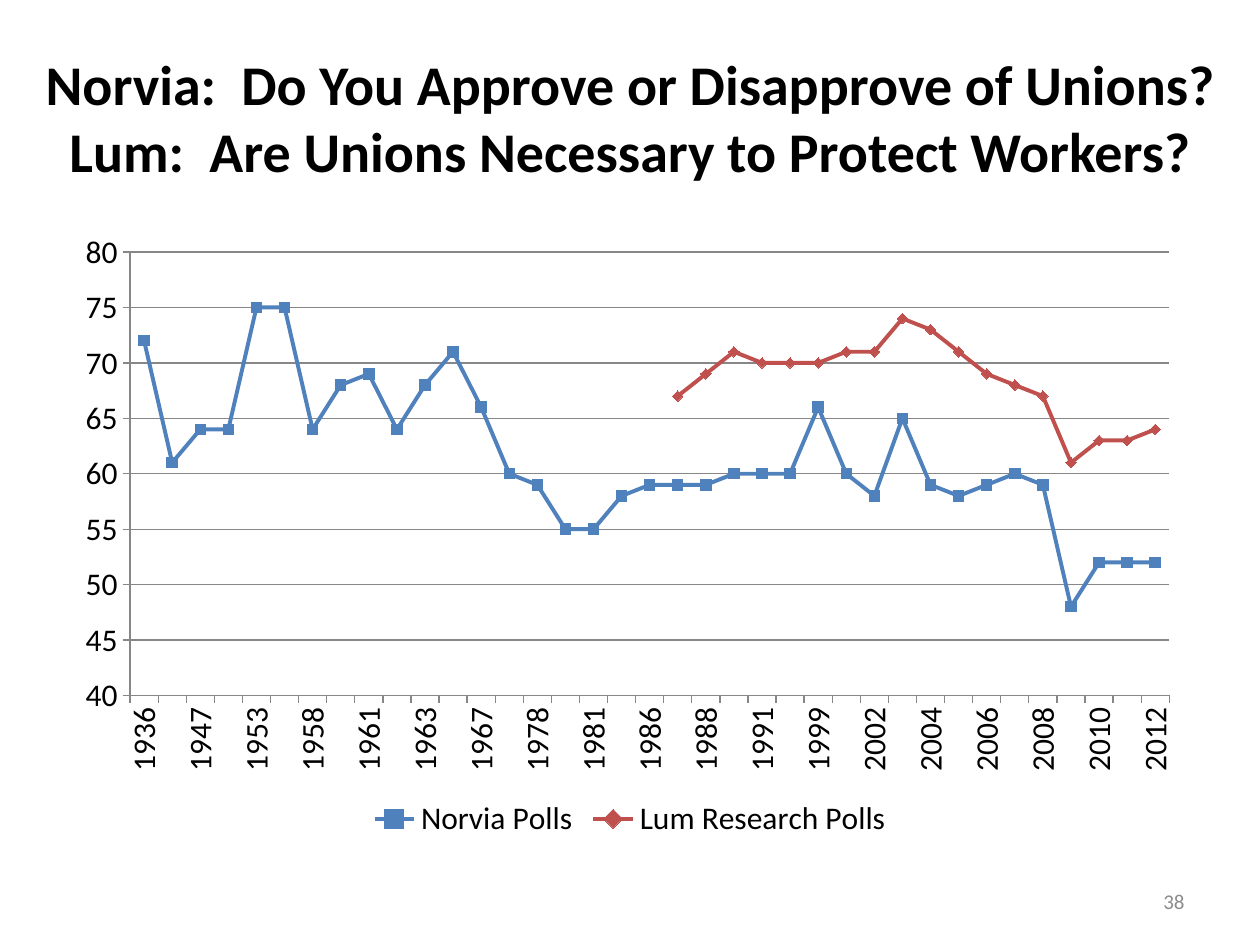
from dataclasses import dataclass

from lxml.etree import Element
from pptx import Presentation
from pptx.chart.data import CategoryChartData
from pptx.dml.color import RGBColor
from pptx.enum.chart import XL_CHART_TYPE, XL_LEGEND_POSITION, XL_MARKER_STYLE, XL_TICK_MARK
from pptx.enum.text import MSO_ANCHOR, PP_ALIGN
from pptx.oxml.ns import qn
from pptx.util import Inches, Pt


@dataclass(frozen=True)
class Theme:
    font: str = "Calibri"
    black: RGBColor = RGBColor.from_string("000000")
    gray: RGBColor = RGBColor.from_string("8C8C8C")
    axis: RGBColor = RGBColor.from_string("878787")
    blue: RGBColor = RGBColor.from_string("4F81BD")
    red: RGBColor = RGBColor.from_string("C0504D")
    title_size: Pt = Pt(32)
    chart_size: Pt = Pt(18)
    number_size: Pt = Pt(12)
    series_width: Pt = Pt(2.25)
    axis_width: Pt = Pt(0.75)
    marker_size: int = 6


THEME = Theme()

TITLE_LINES = (
    "Norvia:  Do You Approve or Disapprove of Unions?",
    "Lum:  Are Unions Necessary to Protect Workers?",
)

YEARS = (
    1936, 1941, 1947, 1948, 1953, 1957, 1958, 1959, 1961, 1962, 1963, 1965, 1967,
    1972, 1978, 1979, 1981, 1985, 1986, 1987, 1988, 1990, 1991, 1997, 1999,
    *range(2001, 2013),
)
APPROVAL = (
    72, 61, 64, 64, 75, 75, 64, 68, 69, 64, 68, 71, 66, 60, 59, 55, 55, 58, 59,
    59, 59, 60, 60, 60, 66, 60, 58, 65, 59, 58, 59, 60, 59, 48, 52, 52, 52,
)
NECESSITY = (67, 69, 71, 70, 70, 70, 71, 71, 74, 73, 71, 69, 68, 67, 61, 63, 63, 64)
NECESSITY_START = YEARS.index(1987)


def style_font(font, size, color, bold=False):
    font.name = THEME.font
    font.size = size
    font.color.rgb = color
    font.bold = bold


def style_line(line, color, width):
    line.color.rgb = color
    line.width = width


def add_text(slide, position, lines, alignment, size, color, bold=False):
    box = slide.shapes.add_textbox(*map(Inches, position))
    frame = box.text_frame
    frame.word_wrap = True
    frame.vertical_anchor = MSO_ANCHOR.MIDDLE
    para = frame.paragraphs[0]
    para.alignment = alignment
    for index, line in enumerate(lines):
        if index:
            para.add_line_break()
        span = para.add_run()
        span.text = line
        style_font(span.font, size, color, bold)


def style_axes(chart):
    for axis in (chart.category_axis, chart.value_axis):
        axis.major_tick_mark = XL_TICK_MARK.OUTSIDE
        axis.minor_tick_mark = XL_TICK_MARK.NONE
        style_line(axis.format.line, THEME.axis, THEME.axis_width)
        style_font(axis.tick_labels.font, THEME.chart_size, THEME.black)

    values = chart.value_axis
    values.minimum_scale = 40
    values.maximum_scale = 80
    values.major_unit = 5
    values.has_major_gridlines = True
    style_line(values.major_gridlines.format.line, THEME.axis, THEME.axis_width)

    categories = chart.category_axis._element
    categories.find(qn("c:txPr")).find(qn("a:bodyPr")).set("rot", "-5400000")
    label_skip = Element(qn("c:tickLblSkip"), val="2")
    categories.find(qn("c:noMultiLvlLbl")).addprevious(label_skip)


def style_series(series, color, marker_style):
    series.smooth = False
    style_line(series.format.line, color, THEME.series_width)
    marker = series.marker
    marker.style = marker_style
    marker.size = THEME.marker_size
    marker.format.fill.solid()
    marker.format.fill.fore_color.rgb = color
    style_line(marker.format.line, color, THEME.axis_width)


def add_poll_chart(slide, position):
    polls = CategoryChartData()
    polls.categories = [str(year) for year in YEARS]
    polls.add_series("Norvia Polls", APPROVAL)
    polls.add_series("Lum Research Polls", (None,) * NECESSITY_START + NECESSITY)
    chart = slide.shapes.add_chart(
        XL_CHART_TYPE.LINE_MARKERS, *map(Inches, position), polls
    ).chart
    style_font(chart.font, THEME.chart_size, THEME.black)
    chart.has_title = False
    chart.has_legend = True
    chart.legend.position = XL_LEGEND_POSITION.BOTTOM
    chart.legend.include_in_layout = False
    style_font(chart.legend.font, THEME.chart_size, THEME.black)
    style_axes(chart)

    plot = chart.plots[0]
    plot.vary_by_categories = False
    looks = (
        (THEME.blue, XL_MARKER_STYLE.SQUARE),
        (THEME.red, XL_MARKER_STYLE.DIAMOND),
    )
    for series, (color, marker_style) in zip(plot.series, looks):
        style_series(series, color, marker_style)


def main():
    deck = Presentation()
    deck.slide_width = Inches(10)
    deck.slide_height = Inches(7.5)
    page = deck.slides.add_slide(deck.slide_layouts[6])
    add_text(page, (0.17, 0.3, 9.67, 1.25), TITLE_LINES, PP_ALIGN.CENTER,
             THEME.title_size, THEME.black, bold=True)
    add_poll_chart(page, (0.5, 1.75, 9, 4.95))
    add_text(page, (7.17, 6.95, 2.33, 0.4), ("38",), PP_ALIGN.RIGHT,
             THEME.number_size, THEME.gray)
    deck.save("out.pptx")


if __name__ == "__main__":
    main()
